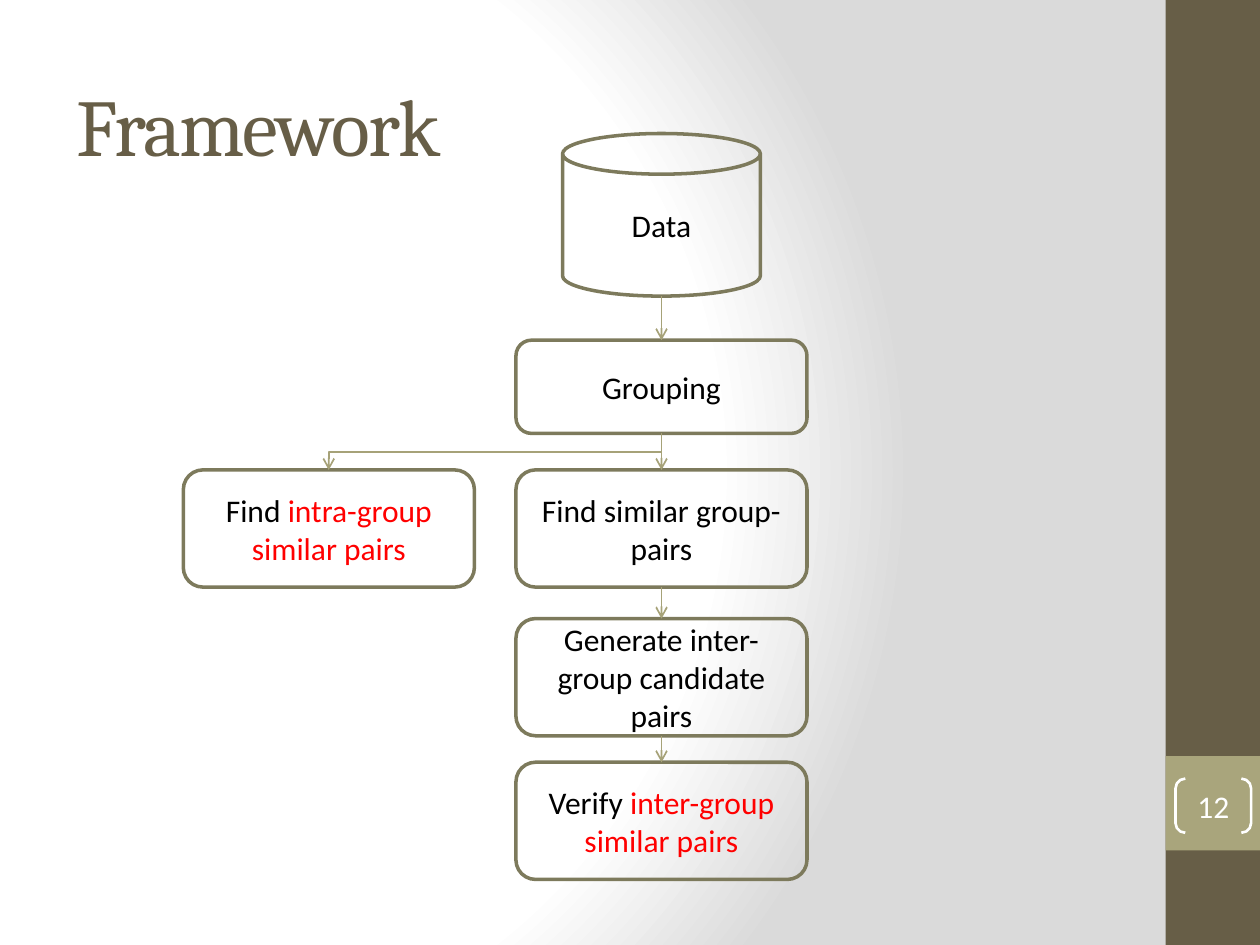
from lxml import etree
from pptx import Presentation
from pptx import util as u
from pptx.dml.color import RGBColor
from pptx.enum import shapes, text
from pptx.oxml import ns

COLORS = {
    "white": "FFFFFF", "shade": "DADADA", "brown": "675E47", "khaki": "A9A57C",
    "outline": "7D7A5C", "arrow": "A6A278", "ink": "000000", "accent": "FF0000",
}
SHAPE = shapes.MSO_SHAPE
CENTER_X = 5.25
BOX_WIDTH = 2.31
STEP_HEIGHT = 0.93
SIDE_X = 2.61
BRANCH_Y = 3.59
TOP, BOTTOM = 0, 2

# top, height, text runs
STEPS = [
    (2.7, 0.74, [("Grouping", "ink")]),
    (3.73, STEP_HEIGHT, [("Find similar group-pairs", "ink")]),
    (4.91, STEP_HEIGHT, [("Generate inter-group candidate pairs", "ink")]),
    (6.05, STEP_HEIGHT, [("Verify ", "ink"), ("inter-group similar pairs", "accent")]),
]
SIDE_RUNS = [("Find ", "ink"), ("intra-group similar pairs", "accent")]


def rgb(name):
    return RGBColor.from_string(COLORS[name])


def set_attributes(target, values):
    for name, value in values.items():
        setattr(target, name, value)


def add_child(parent, tag, **attributes):
    return etree.SubElement(parent, ns.qn(tag), attributes)


def paint_background(page):
    """Fill the page with a circular gradient, white fading to grey."""
    fill = page.background.fill
    fill.gradient()
    gradient = page.background._cSld.find(".//" + ns.qn("a:gradFill"))
    for child in list(gradient):
        gradient.remove(child)
    stops = add_child(gradient, "a:gsLst")
    for position, name in ((0, "white"), (75, "white"), (100, "shade")):
        stop = add_child(stops, "a:gs", pos=str(position * 1000))
        add_child(stop, "a:srgbClr", val=COLORS[name])
    circle = add_child(gradient, "a:path", path="circle")
    add_child(circle, "a:fillToRect", l="20000", t="50000", r="100000", b="50000")


def add_band(page, top, height, color):
    band = page.shapes.add_shape(
        SHAPE.RECTANGLE, u.Inches(9.25), u.Inches(top), u.Inches(0.75), u.Inches(height))
    band.shadow.inherit = False
    band.fill.solid()
    band.fill.fore_color.rgb = rgb(color)
    band.line.fill.background()


def add_title(page, wording):
    title = page.shapes.title
    set_attributes(title, {"left": u.Inches(0.51), "top": u.Inches(0.36),
                           "width": u.Inches(8.33), "height": u.Inches(1.25)})
    set_attributes(title.text_frame, {"vertical_anchor": text.MSO_ANCHOR.MIDDLE,
                                      "auto_size": text.MSO_AUTO_SIZE.NONE})
    para = title.text_frame.paragraphs[0]
    para.alignment = text.PP_ALIGN.LEFT
    span = para.add_run()
    span.text = wording
    set_attributes(span.font, {"name": "Cambria", "size": u.Pt(46)})
    span.font.color.rgb = rgb("brown")
    span.font._element.set("spc", "-100")


def add_outlined(parent, kind, center, top, width, height, runs, line="outline", weight=2):
    """Add an unfilled shape with centred text, placed by its horizontal centre."""
    box = parent.shapes.add_shape(
        kind, u.Inches(center - width / 2), u.Inches(top), u.Inches(width), u.Inches(height))
    box.shadow.inherit = False
    box.fill.background()
    set_attributes(box.line, {"width": u.Pt(weight)})
    box.line.color.rgb = rgb(line)
    set_attributes(box.text_frame, {"word_wrap": True,
                                    "vertical_anchor": text.MSO_ANCHOR.MIDDLE})
    para = box.text_frame.paragraphs[0]
    para.alignment = text.PP_ALIGN.CENTER
    for wording, color in runs:
        span = para.add_run()
        span.text = wording
        set_attributes(span.font, {"name": "Calibri", "size": u.Pt(18)})
        span.font.color.rgb = rgb(color)
    return box


def add_page_number(page, number):
    bracket = add_outlined(page, SHAPE.DOUBLE_BRACKET, 9.63, 6.18, 0.6, 0.43,
                           [(number, "white")], line="white", weight=1.5)
    bracket.adjustments[0] = 0.18
    sides = ("left", "top", "right", "bottom")
    set_attributes(bracket.text_frame, {f"margin_{side}": 0 for side in sides})


def add_arrow(parent, start, end, kind=shapes.MSO_CONNECTOR.STRAIGHT):
    arrow = parent.shapes.add_connector(kind, *(u.Inches(value) for value in start + end))
    arrow.line.width = u.Pt(1)
    arrow.line.color.rgb = rgb("arrow")
    add_child(arrow.line._get_or_add_ln(), "a:tailEnd", type="arrow")
    add_child(arrow._element.spPr, "a:effectLst")
    return arrow


def add_flow(page):
    flow = page.shapes.add_group_shape()
    can_top, can_height = 1.06, 1.29
    add_outlined(flow, SHAPE.CAN, CENTER_X, can_top, 1.57, can_height, [("Data", "ink")])
    previous, bottom = None, can_top + can_height
    for top, height, runs in STEPS:
        box = add_outlined(flow, SHAPE.ROUNDED_RECTANGLE, CENTER_X, top,
                           BOX_WIDTH, height, runs)
        arrow = add_arrow(flow, (CENTER_X, bottom), (CENTER_X, top))
        if previous is not None:
            arrow.begin_connect(previous, BOTTOM)
        arrow.end_connect(box, TOP)
        previous, bottom = box, top + height

    side_top = STEPS[1][0]
    add_outlined(flow, SHAPE.ROUNDED_RECTANGLE, SIDE_X, side_top,
                 BOX_WIDTH, STEP_HEIGHT, SIDE_RUNS)
    branch = add_arrow(flow, (CENTER_X, BRANCH_Y), (SIDE_X, side_top),
                       shapes.MSO_CONNECTOR.ELBOW)
    branch._element.spPr.find(ns.qn("a:prstGeom")).set("prst", "bentConnector2")


def main():
    deck = Presentation()
    set_attributes(deck, {"slide_width": u.Inches(10), "slide_height": u.Inches(7.5)})
    page = deck.slides.add_slide(deck.slide_layouts[5])
    paint_background(page)
    add_band(page, 0, 7.5, "brown")
    add_band(page, 6, 0.75, "khaki")
    add_title(page, "Framework")
    add_page_number(page, "12")
    add_flow(page)
    deck.save("out.pptx")


if __name__ == "__main__":
    main()
